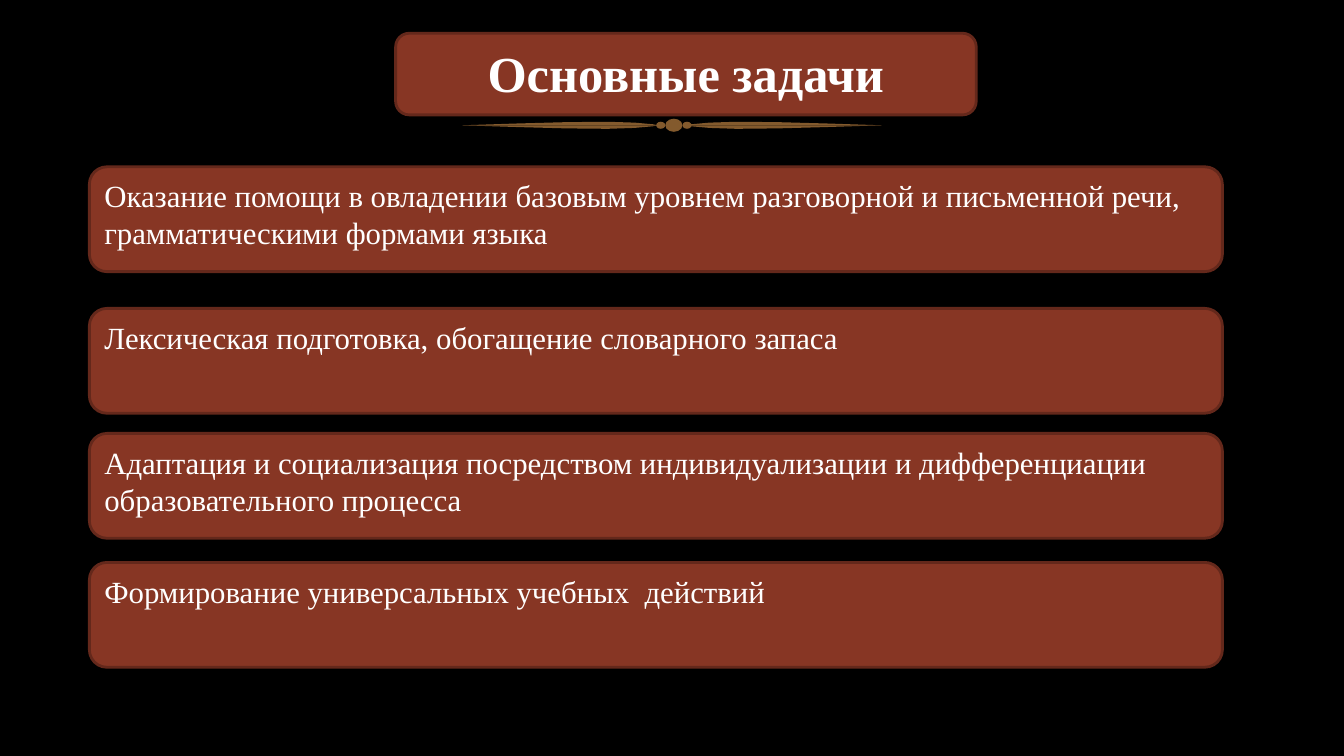
from dataclasses import dataclass

from pptx import Presentation
from pptx import util as u
from pptx.dml.color import RGBColor
from pptx.enum import shapes, text


@dataclass(frozen=True)
class Theme:
    background: str = "000000"
    panel: str = "873624"
    outline: str = "64281B"
    ornament: str = "835A2D"
    ink: str = "FFFFFF"
    font: str = "Times New Roman"
    title_size: int = 36
    body_size: int = 22
    outline_width: int = 2


COLUMNS, ROWS = 133.33, 75
TITLE = "Основные задачи"
TASKS = {
    16.55: "Оказание помощи в овладении базовым уровнем разговорной и письменной речи, грамматическими формами языка",
    30.6: "Лексическая подготовка, обогащение словарного запаса",
    43.0: "Адаптация и социализация посредством индивидуализации и дифференциации образовательного процесса",
    55.8: "Формирование универсальных учебных  действий",
}
LOBE_AXIS, BEAD_AXIS, ORNAMENT_ROW = 66.67, 66.85, 12.43
LOBE_OUTLINE = [(20.8, 0), (15.3, 0.18), (10.5, 0.31), (6.4, 0.35), (3.7, 0.26), (1.9, 0.1), (1.4, 0)]


class SlideBuilder:
    def __init__(self, presentation, theme):
        self.theme = theme
        self.cell = u.Inches(7.5) / ROWS
        presentation.slide_width = self.span(COLUMNS)
        presentation.slide_height = self.span(ROWS)
        self.slide = presentation.slides.add_slide(presentation.slide_layouts[6])
        self.paint(self.slide.background.fill, theme.background)

    def span(self, cells):
        return u.Emu(round(cells * self.cell))

    def paint(self, fill, color):
        fill.solid()
        fill.fore_color.rgb = RGBColor.from_string(color)

    def flatten(self, shape, color):
        shape.shadow.inherit = False
        self.paint(shape.fill, color)
        shape.line.fill.background()
        return shape

    def preset(self, kind, column, row, width, height, color):
        box = [self.span(value) for value in (column, row, width, height)]
        return self.flatten(self.slide.shapes.add_shape(kind, *box), color)

    def bead(self, offset, width, height):
        self.preset(shapes.MSO_SHAPE.OVAL, BEAD_AXIS + offset - width / 2,
                    ORNAMENT_ROW - height / 2, width, height, self.theme.ornament)

    def lobe(self, side, direction):
        points = [(self.span(LOBE_AXIS + side * x), self.span(ORNAMENT_ROW + direction * y))
                  for x, y in LOBE_OUTLINE]
        builder = self.slide.shapes.build_freeform(*points[0])
        builder.add_line_segments(points[1:], close=True)
        self.flatten(builder.convert_to_shape(), self.theme.ornament)

    def ornament(self):
        for side in (-1, 1):
            for direction in (-1, 1):
                self.lobe(side, direction)
            self.bead(side * 1.3, 0.9, 0.7)
        self.bead(0, 1.7, 1.3)

    def panel(self, wording, column, row, width, height, size, title=False):
        shape = self.preset(shapes.MSO_SHAPE.FLOWCHART_ALTERNATE_PROCESS,
                            column, row, width, height, self.theme.panel)
        self.paint(shape.line.fill, self.theme.outline)
        shape.line.width = u.Pt(self.theme.outline_width)
        frame = shape.text_frame
        frame.word_wrap = True
        frame.vertical_anchor = text.MSO_ANCHOR.TOP
        paragraph = frame.paragraphs[0]
        paragraph.text = wording
        paragraph.alignment = text.PP_ALIGN.CENTER if title else text.PP_ALIGN.LEFT
        paragraph.font.name = self.theme.font
        paragraph.font.size = u.Pt(size)
        paragraph.font.bold = title
        paragraph.font.color.rgb = RGBColor.from_string(self.theme.ink)


def main():
    presentation = Presentation()
    theme = Theme()
    builder = SlideBuilder(presentation, theme)
    builder.ornament()
    builder.panel(TITLE, 39.25, 3.3, 57.6, 8.1, theme.title_size, title=True)
    for row, task in TASKS.items():
        builder.panel(task, 8.87, row, 112.4, 10.4, theme.body_size)
    presentation.save("out.pptx")


if __name__ == "__main__":
    main()
